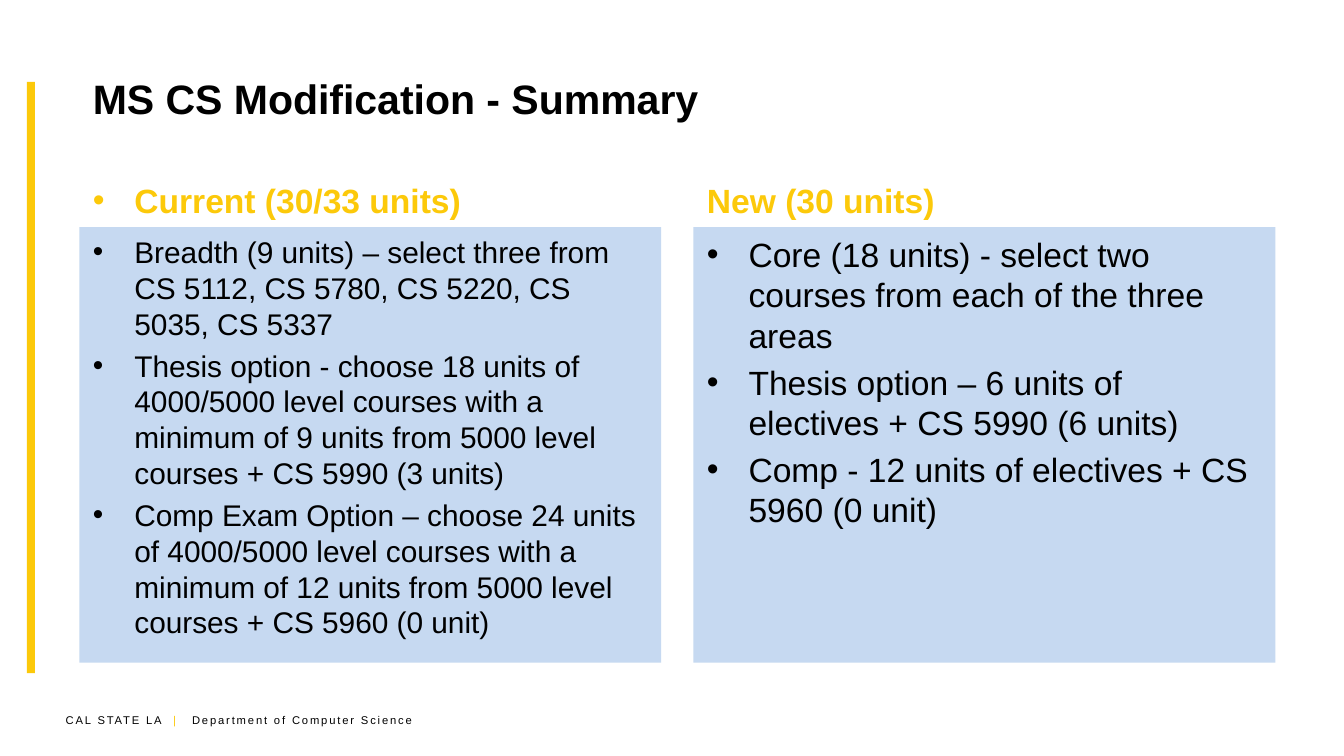
from lxml import etree
from pptx import Presentation
from pptx import util as u
from pptx.dml import color
from pptx.enum import shapes, text
from pptx.oxml import ns

COLOURS = {"gold": "FCC90A", "panel": "C6D9F1", "ink": "000000"}
COLUMN_LEFTS = (0.59, 5.16)
COLUMN_WIDTH = 4.33
HEADING = {"size": u.Pt(18), "bold": True}
COLUMNS = [
    {
        "heading": "Current (30/33 units)",
        "heading_bullet": True,
        "size": 16,
        "items": [
            "Breadth (9 units) – select three from CS 5112, CS 5780, CS 5220, CS 5035, CS 5337",
            "Thesis option - choose 18 units of 4000/5000 level courses with a minimum of "
            "9 units from 5000 level courses + CS 5990 (3 units)",
            "Comp Exam Option – choose 24 units of 4000/5000 level courses with a minimum of "
            "12 units from 5000 level courses + CS 5960 (0 unit)",
        ],
    },
    {
        "heading": "New (30 units)",
        "heading_bullet": False,
        "size": 18,
        "items": [
            "Core (18 units) - select two courses from each of the three areas",
            "Thesis option – 6 units of electives + CS 5990 (6 units)",
            "Comp - 12 units of electives + CS 5960 (0 unit)",
        ],
    },
]
FOOTER_RUNS = [
    ("CAL STATE LA", "ink"),
    ("\t|", "gold"),
    ("\tDepartment of Computer Science", "ink"),
]
FOOTER_TABS = (0.8, 0.94)


def rgb(name):
    return color.RGBColor.from_string(COLOURS[name])


def set_values(target, values):
    for name, value in values.items():
        setattr(target, name, value)


def place(shape, left, top, width, height):
    names = ("left", "top", "width", "height")
    lengths = map(u.Inches, (left, top, width, height))
    set_values(shape, dict(zip(names, lengths)))


def set_frame(shape, anchor):
    frame = shape.text_frame
    set_values(frame, {
        "word_wrap": True,
        "auto_size": text.MSO_AUTO_SIZE.NONE,
        "vertical_anchor": anchor,
    })
    return frame


def add_run(paragraph, wording, colour, values):
    run = paragraph.add_run()
    run.text = wording
    set_values(run.font, {"name": "Arial", **values})
    run.font.color.rgb = rgb(colour)
    return run


def add_bullet(paragraph):
    properties = paragraph._p.get_or_add_pPr()
    properties.set("marL", str(u.Inches(0.31)))
    properties.set("indent", str(u.Inches(-0.31)))
    etree.SubElement(properties, ns.qn("a:buFont"), typeface="Arial")
    etree.SubElement(properties, ns.qn("a:buChar"), char="•")


def fill_paragraphs(frame, lines, colour, values, bullet):
    for index, line in enumerate(lines):
        paragraph = frame.add_paragraph() if index else frame.paragraphs[0]
        if bullet:
            add_bullet(paragraph)
        set_values(paragraph, {
            "alignment": text.PP_ALIGN.LEFT,
            "space_before": u.Pt(values["size"].pt * 0.2 if index else 0),
        })
        add_run(paragraph, line, colour, values)


def add_title(slide, wording):
    title = slide.shapes.title
    place(title, 0.59, 0.26, 8.9, 0.94)
    frame = set_frame(title, text.MSO_ANCHOR.MIDDLE)
    fill_paragraphs(frame, [wording], "ink", {"size": u.Pt(22), "bold": True}, False)


def add_column(heading, panel, left, column):
    place(heading, left, 1.16, COLUMN_WIDTH, 0.53)
    frame = set_frame(heading, text.MSO_ANCHOR.BOTTOM)
    fill_paragraphs(frame, [column["heading"]], "gold", HEADING, column["heading_bullet"])

    place(panel, left, 1.69, COLUMN_WIDTH, 3.24)
    panel.fill.solid()
    panel.fill.fore_color.rgb = rgb("panel")
    frame = set_frame(panel, text.MSO_ANCHOR.TOP)
    fill_paragraphs(frame, column["items"], "ink", {"size": u.Pt(column["size"])}, True)


def add_accent_bar(slide):
    bar = slide.shapes.add_shape(
        shapes.MSO_SHAPE.RECTANGLE,
        u.Inches(0.2), u.Inches(0.61), u.Inches(0.06), u.Inches(4.4))
    bar.shadow.inherit = False
    bar.fill.solid()
    bar.fill.fore_color.rgb = rgb("gold")
    bar.line.fill.background()


def add_footer(slide):
    footer = slide.shapes.add_textbox(
        u.Inches(0.39), u.Inches(5.26), u.Inches(2.92), u.Inches(0.2))
    paragraph = set_frame(footer, text.MSO_ANCHOR.TOP).paragraphs[0]
    tabs = etree.SubElement(paragraph._p.get_or_add_pPr(), ns.qn("a:tabLst"))
    for position in FOOTER_TABS:
        etree.SubElement(tabs, ns.qn("a:tab"), pos=str(u.Inches(position)), algn="l")
    for wording, colour in FOOTER_RUNS:
        run = add_run(paragraph, wording, colour, {"size": u.Pt(6)})
        run._r.get_or_add_rPr().set("spc", "100")


def main():
    presentation = Presentation()
    presentation.slide_width = u.Inches(10)
    presentation.slide_height = u.Inches(10 * 9 / 16)
    comparison = presentation.slide_layouts.get_by_name("Comparison")
    slide = presentation.slides.add_slide(comparison)
    add_footer(slide)
    add_accent_bar(slide)
    add_title(slide, "MS CS Modification - Summary")
    bodies = list(slide.placeholders)[1:]
    for heading, panel, left, column in zip(bodies[::2], bodies[1::2], COLUMN_LEFTS, COLUMNS):
        add_column(heading, panel, left, column)
    presentation.save("out.pptx")


if __name__ == "__main__":
    main()
